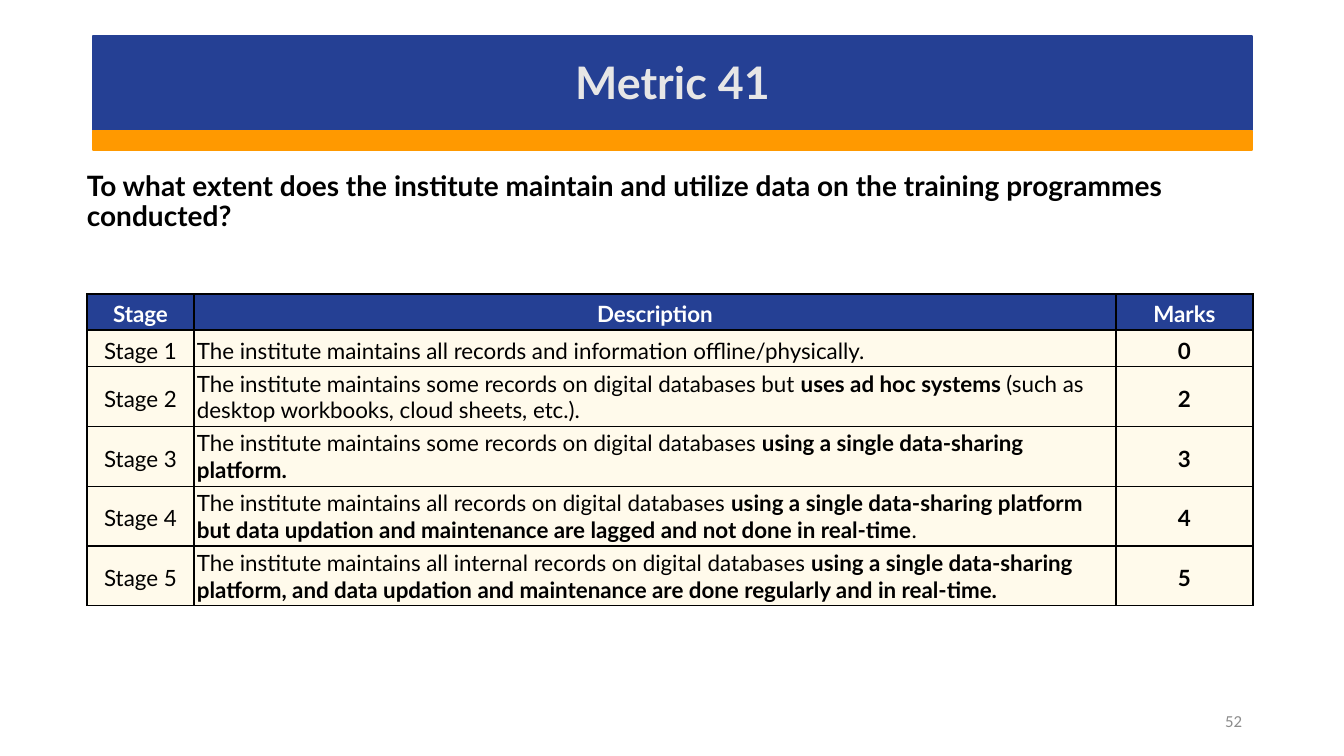
from lxml.etree import SubElement
from pptx import Presentation
from pptx.dml.color import RGBColor
from pptx.enum.shapes import MSO_SHAPE
from pptx.enum.text import MSO_ANCHOR, PP_ALIGN
from pptx.oxml.ns import qn
from pptx.util import Emu, Pt

COLORS = {
    "blue": "254094",
    "orange": "FF9900",
    "cream": "FFFAEB",
    "black": "000000",
    "white": "FFFFFF",
    "title": "E7E6E6",
    "number": "8C8C8C",
}
QUESTION = ("To what extent does the institute maintain and utilize data "
            "on the training programmes conducted?")
COLUMN_WIDTHS = [107, 922, 137]
ROW_HEIGHTS = [36, 36, 59, 59, 59, 59]
HEADINGS = ["Stage", "Description", "Marks"]

# Each stage: description as (text, bold) runs, then marks
STAGES = [
    ([("The institute maintains all records and information offline/physically.", False)], 0),
    ([("The institute maintains some records on digital databases but ", False),
      ("uses ad hoc systems ", True),
      ("(such as desktop workbooks, cloud sheets, etc.).", False)], 2),
    ([("The institute maintains some records on digital databases ", False),
      ("using a single data-sharing platform.", True)], 3),
    ([("The institute maintains all records on digital databases ", False),
      ("using a single data-sharing platform but data updation and maintenance "
       "are lagged and not done in real-time", True),
      (".", False)], 4),
    ([("The institute maintains all internal records on digital databases ", False),
      ("using a single data-sharing platform, and data updation and maintenance "
       "are done regularly and in real-time.", True)], 5),
]


def px(count):
    return Emu(round(count * 914400 / 100.8))


def color(name):
    return RGBColor.from_string(COLORS[name])


def style_run(run, size, color_name, bold, font_name="Lato"):
    run.font.name = font_name
    run.font.size = Pt(size)
    run.font.bold = bold
    run.font.color.rgb = color(color_name)


def add_bar(slide, top, height, color_name):
    shape = slide.shapes.add_shape(MSO_SHAPE.RECTANGLE, px(93), px(top), px(1159), px(height))
    shape.shadow.inherit = False
    shape.fill.solid()
    shape.fill.fore_color.rgb = color(color_name)
    shape.line.color.rgb = color(color_name)
    shape.line.width = Pt(1)


def add_text(slide, box, text, size, color_name, bold=True, font_name="Lato",
             align=PP_ALIGN.LEFT, anchor=MSO_ANCHOR.MIDDLE, spacing=0.9):
    shape = slide.shapes.add_textbox(*map(px, box))
    text_frame = shape.text_frame
    text_frame.word_wrap = True
    text_frame.vertical_anchor = anchor
    text_frame.text = text
    paragraph = text_frame.paragraphs[0]
    paragraph.alignment = align
    paragraph.line_spacing = spacing
    style_run(paragraph.runs[0], size, color_name, bold, font_name)


def add_borders(cell):
    properties = cell._tc.get_or_add_tcPr()
    for side in ("a:lnL", "a:lnR", "a:lnT", "a:lnB"):
        line = SubElement(properties, qn(side), w=str(Pt(1)))
        fill = SubElement(line, qn("a:solidFill"))
        SubElement(fill, qn("a:srgbClr"), val=COLORS["black"])


def fill_cell(cell, runs, fill_name, color_name="black", centered=True,
              anchor=MSO_ANCHOR.MIDDLE, margin=2):
    add_borders(cell)
    cell.fill.solid()
    cell.fill.fore_color.rgb = color(fill_name)
    cell.vertical_anchor = anchor
    cell.margin_left = cell.margin_right = px(margin)
    cell.margin_top = cell.margin_bottom = px(margin)
    paragraph = cell.text_frame.paragraphs[0]
    if centered:
        paragraph.alignment = PP_ALIGN.CENTER
        paragraph.line_spacing = 1.15
    for text, bold in runs:
        run = paragraph.add_run()
        run.text = text
        style_run(run, 16, color_name, bold)


def add_stage_table(slide):
    table = slide.shapes.add_table(
        len(ROW_HEIGHTS), len(COLUMN_WIDTHS), px(87), px(294),
        px(sum(COLUMN_WIDTHS)), px(sum(ROW_HEIGHTS))).table
    table.horz_banding = False
    for column, width in zip(table.columns, COLUMN_WIDTHS):
        column.width = px(width)
    for row, height in zip(table.rows, ROW_HEIGHTS):
        row.height = px(height)

    # Heading row
    for index, heading in enumerate(HEADINGS):
        fill_cell(table.cell(0, index), [(heading, True)], "blue", "white")

    # Stage rows
    for number, (description, marks) in enumerate(STAGES, start=1):
        fill_cell(table.cell(number, 0), [(f"Stage {number}", False)], "cream", margin=3)
        fill_cell(table.cell(number, 1), description, "cream", centered=False,
                  anchor=MSO_ANCHOR.BOTTOM, margin=3)
        fill_cell(table.cell(number, 2), [(str(marks), True)], "cream")


def main():
    presentation = Presentation()
    presentation.slide_width = px(1344)
    presentation.slide_height = px(756)
    slide = presentation.slides.add_slide(presentation.slide_layouts[6])

    # Title banner
    add_bar(slide, 36, 94, "blue")
    add_bar(slide, 131, 19, "orange")
    add_text(slide, (93, 39, 1159, 92), "Metric 41", 32, "title", align=PP_ALIGN.CENTER)

    # Question and its stages
    add_text(slide, (77, 167, 1204, 155), QUESTION, 20, "black", anchor=MSO_ANCHOR.TOP)
    add_stage_table(slide)

    # Slide number
    add_text(slide, (950, 701, 302, 40), "52", 12, "number", bold=False,
             font_name="Calibri", align=PP_ALIGN.RIGHT, spacing=1.0)

    presentation.save("out.pptx")


if __name__ == "__main__":
    main()
